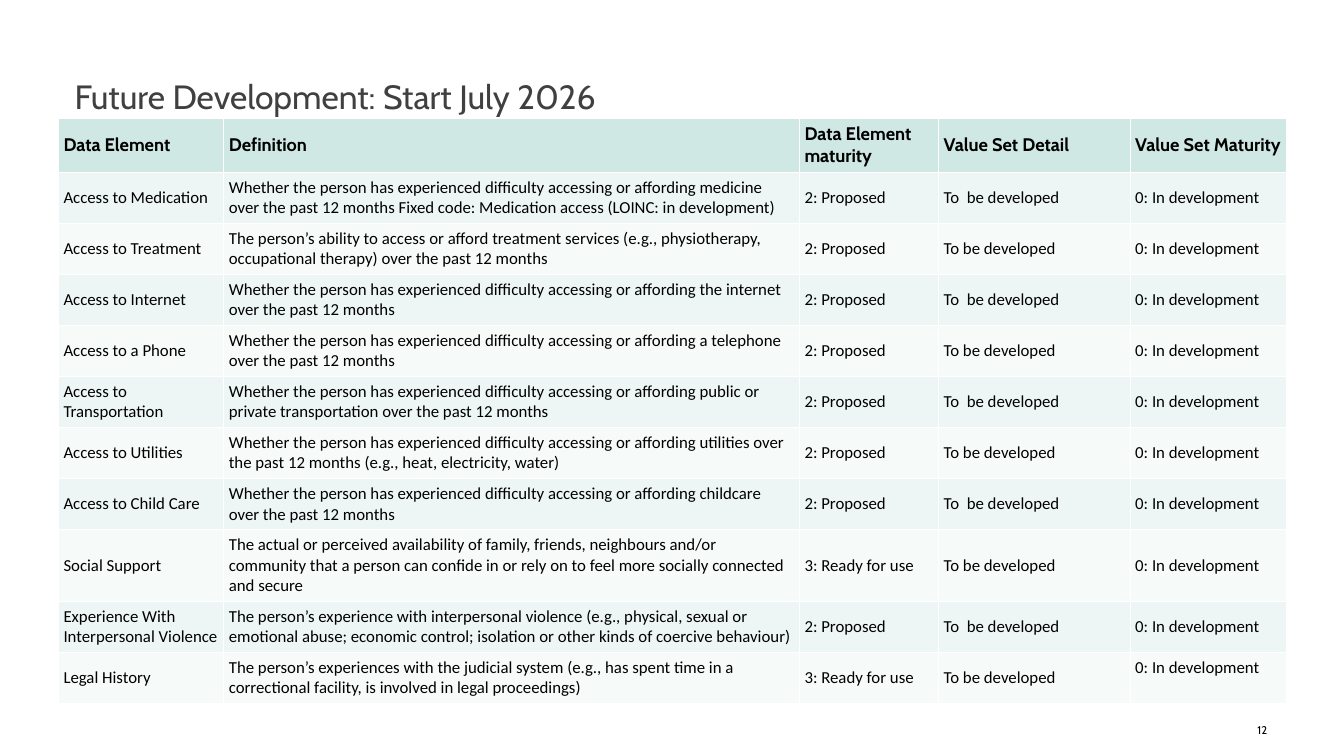
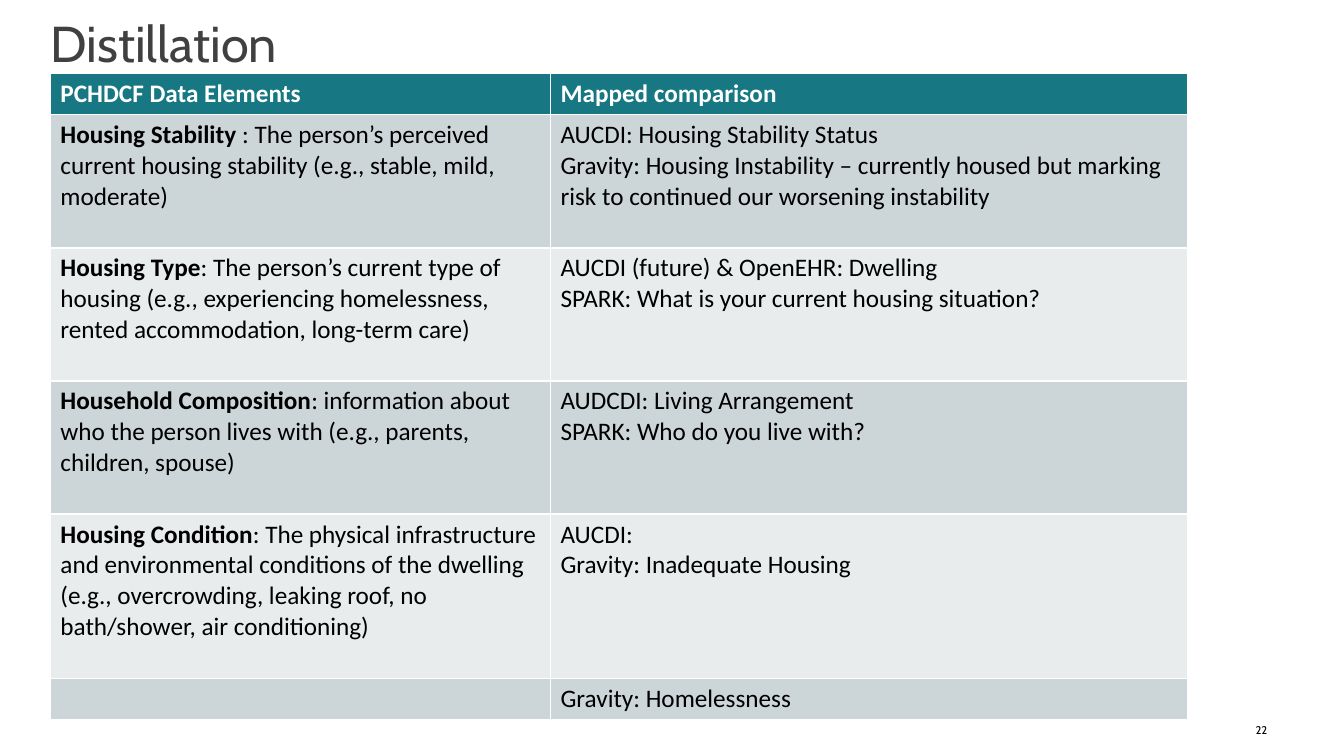
from pptx import Presentation
from pptx.dml.color import RGBColor
from pptx.enum.text import MSO_ANCHOR as Anchor, MSO_AUTO_SIZE as AutoSize, PP_ALIGN as Align
from pptx.util import Inches, Pt

COLORS = {
    "ink": "000000", "title": "404040", "white": "FFFFFF",
    "mint": "CFE8E3", "mint_mid": "EDF6F4", "mint_pale": "F6FBFA",
    "teal": "177783", "gray_mid": "CCD6D9", "gray_pale": "E8ECED",
}
TITLE_ONLY = 5


def write(frame, paragraphs, font="Calibri", size=12, color="ink", bold=False,
          align=Align.LEFT, line_height=None):
    """Fill a text frame; a (lead, rest) paragraph gets a bold lead."""
    frame.word_wrap = True
    for index, content in enumerate(paragraphs):
        paragraph = frame.paragraphs[0] if index == 0 else frame.add_paragraph()
        paragraph.alignment = align
        if line_height:
            paragraph.line_spacing = Pt(line_height)
        if isinstance(content, tuple):
            pieces = [(content[0], True), (content[1], False)]
        else:
            pieces = [(content, bold)]
        for text, is_bold in pieces:
            run = paragraph.add_run()
            run.text = text
            run.font.name = font
            run.font.size = Pt(size)
            run.font.bold = is_bold
            run.font.color.rgb = RGBColor.from_string(COLORS[color])


def place_box(box, left, top, width, height, anchor):
    """Position a box without insets or automatic resizing."""
    box.left, box.top = Inches(left), Inches(top)
    box.width, box.height = Inches(width), Inches(height)
    frame = box.text_frame
    frame.margin_left = frame.margin_right = frame.margin_top = frame.margin_bottom = 0
    frame.auto_size = AutoSize.NONE
    frame.vertical_anchor = anchor
    return frame


# Future data elements: name, definition, maturity, value set detail
DIFFICULTY = "Whether the person has experienced difficulty accessing or affording "
PROPOSED, READY = "2: Proposed", "3: Ready for use"
future_elements = [
    ("Access to Medication", DIFFICULTY + "medicine over the past 12 months "
     "Fixed code: Medication access (LOINC: in development)", PROPOSED, "To  be developed"),
    ("Access to Treatment", "The person’s ability to access or afford treatment services "
     "(e.g., physiotherapy, occupational therapy) over the past 12 months",
     PROPOSED, "To be developed"),
    ("Access to Internet", DIFFICULTY + "the internet over the past 12 months",
     PROPOSED, "To  be developed"),
    ("Access to a Phone", DIFFICULTY + "a telephone over the past 12 months",
     PROPOSED, "To be developed"),
    ("Access to Transportation", DIFFICULTY + "public or private transportation "
     "over the past 12 months", PROPOSED, "To  be developed"),
    ("Access to Utilities", DIFFICULTY + "utilities over the past 12 months "
     "(e.g., heat, electricity, water)", PROPOSED, "To be developed"),
    ("Access to Child Care", DIFFICULTY + "childcare over the past 12 months",
     PROPOSED, "To  be developed"),
    ("Social Support", "The actual or perceived availability of family, friends, neighbours "
     "and/or community that a person can confide in or rely on to feel more socially "
     "connected and secure", READY, "To be developed"),
    ("Experience With Interpersonal Violence", "The person’s experience with interpersonal "
     "violence (e.g., physical, sexual or emotional abuse; economic control; isolation or "
     "other kinds of coercive behaviour)", PROPOSED, "To  be developed"),
    ("Legal History", "The person’s experiences with the judicial system (e.g., has spent "
     "time in a correctional facility, is involved in legal proceedings)",
     READY, "To be developed"),
]

# Housing elements and the entries they map to
housing_mapping = [
    ([("Housing Stability ", ": The person’s perceived current housing stability "
       "(e.g., stable, mild, moderate)")],
     ["AUCDI: Housing Stability Status",
      "Gravity: Housing Instability – currently housed but marking risk to continued "
      "our worsening instability"]),
    ([("Housing Type", ": The person’s current type of housing (e.g., experiencing "
       "homelessness, rented accommodation, long-term care)")],
     ["AUCDI (future) & OpenEHR: Dwelling",
      "SPARK: What is your current housing situation?"]),
    ([("Household Composition", ": information about who the person lives with "
       "(e.g., parents, children, spouse)")],
     ["AUDCDI: Living Arrangement", "SPARK: Who do you live with?"]),
    ([("Housing Condition", ": The physical infrastructure and environmental conditions "
       "of the dwelling (e.g., overcrowding, leaking roof, no bath/shower, "
       "air conditioning)")],
     ["AUCDI:", "Gravity: Inadequate Housing"]),
    ([], ["Gravity: Homelessness"]),
]

pages = [
    {
        "number": "12", "title": "Future Development: Start July 2026",
        "title_at": (0.74, 0.6, 11.92, 0.5), "title_size": 24,
        "table_at": (0.58, 1.17), "columns": [1.64, 5.71, 1.38, 1.9, 1.55],
        "row_heights": [0.53] + [0.5] * 7 + [0.71] + [0.5] * 2,
        "head": ["Data Element", "Definition", "Data Element maturity",
                 "Value Set Detail", "Value Set Maturity"],
        "head_format": {"font": "Cabin", "size": 13},
        "body": [[[text] for text in (*element, "0: In development")]
                 for element in future_elements],
        "body_size": 12, "side_margin": 0.05, "anchor": Anchor.MIDDLE,
        "fills": ("mint", "mint_mid", "mint_pale"),
    },
    {
        "number": "22", "title": "Distillation",
        "title_at": (0.5, 0.16, 11.99, 0.56), "title_size": 36,
        "table_at": (0.5, 0.73), "columns": [4.96, 6.32],
        "row_heights": [0.41] + [1.32] * 3 + [1.63, 0.41],
        "head": ["PCHDCF Data Elements", "Mapped comparison"],
        "head_format": {"size": 18, "color": "white"},
        "body": housing_mapping,
        "body_size": 18, "side_margin": 0.1, "anchor": Anchor.TOP,
        "fills": ("teal", "gray_mid", "gray_pale"),
    },
]

deck = Presentation()
deck.slide_width, deck.slide_height = Inches(13.33), Inches(7.5)

for page in pages:
    slide = deck.slides.add_slide(deck.slide_layouts[TITLE_ONLY])

    # Title and page number
    heading = place_box(slide.shapes.title, *page["title_at"], Anchor.TOP)
    write(heading, [page["title"]], font="Cabin", size=page["title_size"],
          color="title", line_height=40)
    number_box = slide.shapes.add_textbox(0, 0, 0, 0)
    page_number = place_box(number_box, 11.94, 7.18, 0.63, 0.13, Anchor.MIDDLE)
    write(page_number, [page["number"]], font="Cabin", size=8, align=Align.RIGHT)

    # Table grid
    rows = [[[label] for label in page["head"]], *page["body"]]
    left, top = page["table_at"]
    table = slide.shapes.add_table(
        len(rows), len(page["columns"]), Inches(left), Inches(top),
        Inches(sum(page["columns"])), Inches(sum(page["row_heights"]))).table
    for column, width in zip(table.columns, page["columns"]):
        column.width = Inches(width)
    for row, height in zip(table.rows, page["row_heights"]):
        row.height = Inches(height)

    # Cells: header row, then two alternating bands
    head_fill, *bands = page["fills"]
    for row_index, row in enumerate(rows):
        is_head = row_index == 0
        fill = head_fill if is_head else bands[(row_index - 1) % 2]
        style = {"bold": True, **page["head_format"]} if is_head else {"size": page["body_size"]}
        for column_index, paragraphs in enumerate(row):
            cell = table.cell(row_index, column_index)
            cell.fill.solid()
            cell.fill.fore_color.rgb = RGBColor.from_string(COLORS[fill])
            cell.margin_left = cell.margin_right = Inches(page["side_margin"])
            cell.margin_top = cell.margin_bottom = Inches(0.05)
            cell.vertical_anchor = page["anchor"]
            write(cell.text_frame, paragraphs, **style)

    # The closing cell sits at the top of its row
    table.cell(len(rows) - 1, len(page["columns"]) - 1).vertical_anchor = Anchor.TOP

deck.save("out.pptx")
